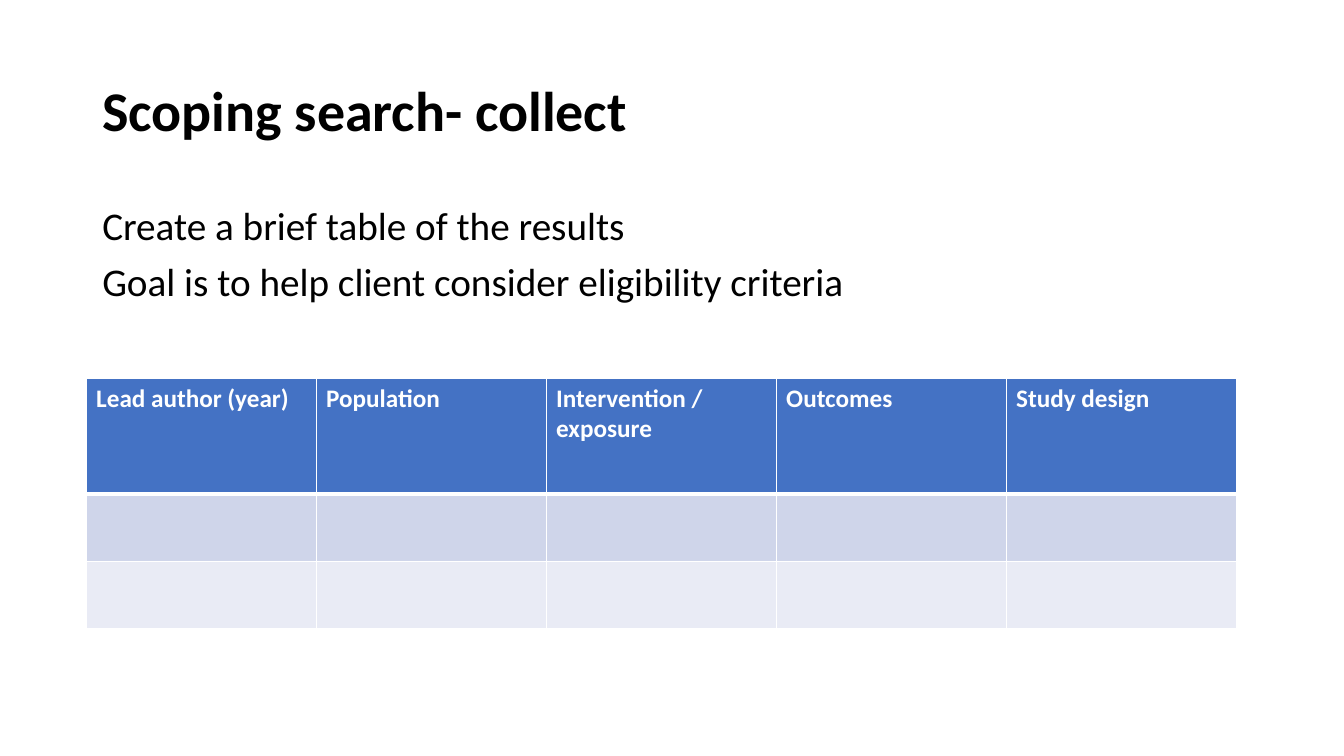
import pptx
import pptx.dml.color
import pptx.enum.text
import pptx.oxml
import pptx.oxml.ns
import pptx.util

Pt = pptx.util.Pt
ANCHOR = pptx.enum.text.MSO_ANCHOR


def rgb(value):
    return pptx.dml.color.RGBColor.from_string(value)


class SlideBuilder:
    font = "Calibri"
    ink = "000000"
    paper = "FFFFFF"
    header_fill = "4472C4"
    band_fills = ("CFD5EA", "E9EBF5")

    def __init__(self, slide):
        self.s = slide

    def style(self, p, size, color, bold=False):
        p.font.name = self.font
        p.font.size = Pt(size)
        p.font.bold = bold
        p.font.color.rgb = rgb(color)

    def text(self, box, lines, size, bold=False, anchor=ANCHOR.TOP, before=0):
        sp = self.s.shapes.add_textbox(*map(Pt, box))
        tf = sp.text_frame
        tf.word_wrap = True
        tf.vertical_anchor = anchor
        tf.text = "\n".join(lines)
        for p in tf.paragraphs:
            p.line_spacing = 0.9
            p.space_before = Pt(before)
            self.style(p, size, self.ink, bold)

    def borders(self, cell, **widths):
        """Draw cell edges; keys are L, R, T and B, in that order."""
        tc_pr = cell._tc.get_or_add_tcPr()
        for side, width in widths.items():
            tc_pr.append(pptx.oxml.parse_xml(
                f'<a:ln{side} {pptx.oxml.ns.nsdecls("a")} w="{Pt(width)}">'
                f'<a:solidFill><a:srgbClr val="{self.paper}"/></a:solidFill>'
                f'</a:ln{side}>'))

    def table(self, box, headers, row_heights):
        """Add a table with a header row and empty banded rows below it."""
        frame = self.s.shapes.add_table(
            len(row_heights), len(headers), *map(Pt, box))
        table = frame.table
        for column in table.columns:
            column.width = Pt(box[2] / len(headers))
        fills = (self.header_fill, *self.band_fills)
        for i, (height, fill) in enumerate(zip(row_heights, fills)):
            table.rows[i].height = Pt(height)
            for cell in table.rows[i].cells:
                self.borders(cell, L=1, R=1, T=3 if i == 1 else 1,
                             B=3 if i == 0 else 1)
                cell.fill.solid()
                cell.fill.fore_color.rgb = rgb(fill)
        for cell, header in zip(table.rows[0].cells, headers):
            cell.text = header
            self.style(cell.text_frame.paragraphs[0], 18, self.paper, True)


def main():
    prs = pptx.Presentation()
    prs.slide_width, prs.slide_height = Pt(960), Pt(540)
    slide = SlideBuilder(prs.slides.add_slide(prs.slide_layouts[6]))
    slide.text((66, 28.75, 828, 104.4), ["Scoping search- collect"],
               40, bold=True, anchor=ANCHOR.MIDDLE)
    slide.text((66, 143.75, 828, 342.6),
               ["Create a brief table of the results",
                "Goal is to help client consider eligibility criteria"],
               28, before=10)
    slide.table((61.5, 270, 821.5, 178.8),
                ["Lead author (year)", "Population", "Intervention / exposure",
                 "Outcomes", "Study design"],
                [82.8, 48, 48])
    prs.save("out.pptx")


if __name__ == "__main__":
    main()
